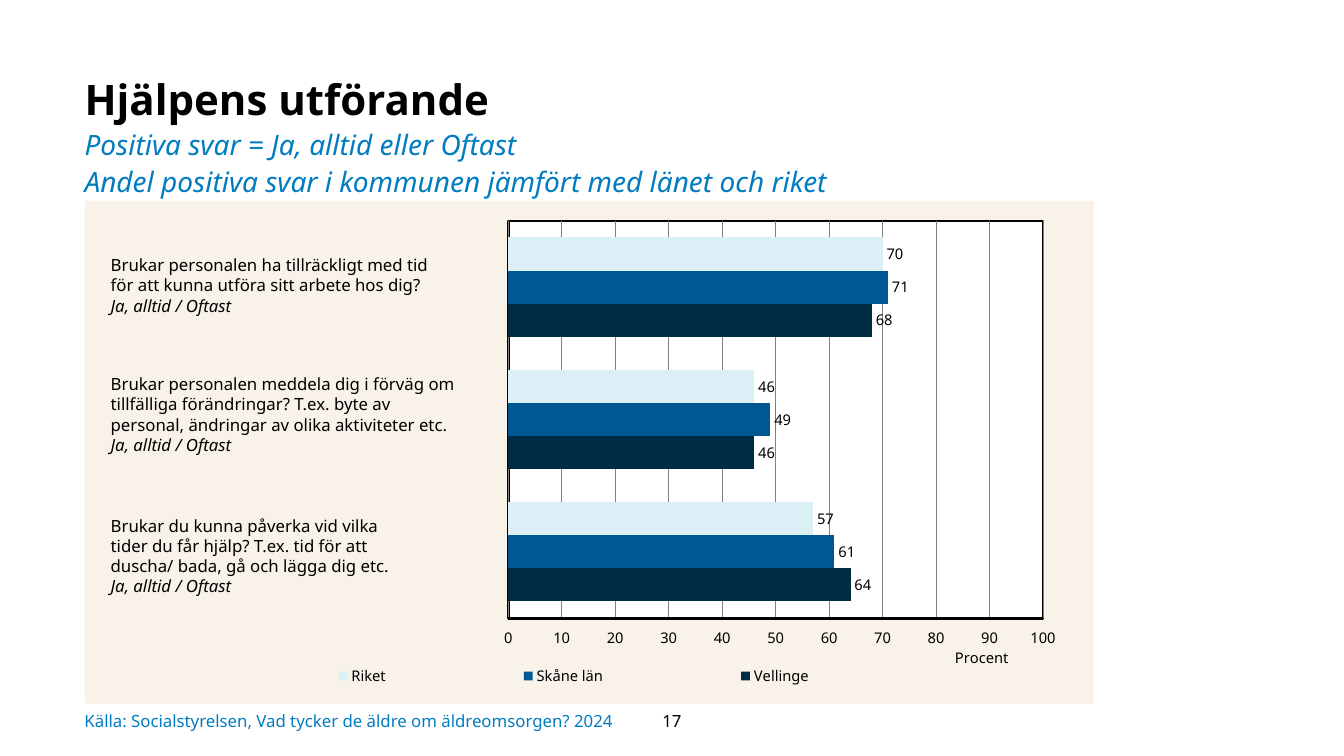
from dataclasses import dataclass

from lxml.etree import SubElement
from pptx import Presentation
from pptx.chart.data import CategoryChartData
from pptx.dml.color import RGBColor
from pptx.enum.chart import XL_CHART_TYPE as ChartType
from pptx.enum.chart import XL_LABEL_POSITION as LabelPosition
from pptx.enum.chart import XL_LEGEND_POSITION as LegendPosition
from pptx.enum.chart import XL_TICK_LABEL_POSITION as TickLabels
from pptx.enum.chart import XL_TICK_MARK as TickMark
from pptx.enum.text import MSO_ANCHOR as Anchor
from pptx.enum.text import MSO_AUTO_SIZE as AutoSize
from pptx.enum.text import PP_ALIGN as Align
from pptx.oxml import parse_xml
from pptx.oxml.ns import nsdecls, qn
from pptx.util import Cm, Pt


@dataclass(frozen=True)
class Theme:
    font: str = "Noto Sans"
    black: str = "000000"
    white: str = "FFFFFF"
    accent: str = "017CC1"
    panel: str = "F8F2E8"
    grid: str = "808080"
    series: tuple = ("002B45", "005892", "DBF0F6")
    heading: float = 30
    subheading: float = 20
    body: float = 12
    chart: float = 10.5


@dataclass(frozen=True)
class Box:
    left: float
    top: float
    width: float
    height: float

    def lengths(self):
        return Cm(self.left), Cm(self.top), Cm(self.width), Cm(self.height)

    def inside(self, left, top, width, height):
        return Box(self.left + left, self.top + top, width, height)


THEME = Theme()
HEADING = "Hjälpens utförande"
SUBHEADINGS = (
    "Positiva svar = Ja, alltid eller Oftast",
    "Andel positiva svar i kommunen jämfört med länet och riket",
)
ANSWER = "Ja, alltid / Oftast"
QUESTIONS = (
    (1.24, 11.99, "Brukar personalen ha tillräckligt med tid\nför att kunna utföra sitt arbete hos dig?"),
    (4.24, 9.45, "Brukar personalen meddela dig i förväg om tillfälliga förändringar? "
                 "T.ex. byte av personal, ändringar av olika aktiviteter etc."),
    (7.8, 7.54, "Brukar du kunna påverka vid vilka tider du får hjälp? "
                "T.ex. tid för att duscha/ bada, gå och lägga dig etc."),
)
RESULTS = {"Vellinge": (64, 46, 68), "Skåne län": (61, 49, 71), "Riket": (57, 46, 70)}
SOURCE = "Källa: Socialstyrelsen, Vad tycker de äldre om äldreomsorgen? 2024"


def rgb(color):
    return RGBColor.from_string(color)


def style(font, size, color=THEME.black, bold=False, italic=False):
    font.name = THEME.font
    font.size = Pt(size)
    font.color.rgb = rgb(color)
    font.bold = bold
    font.italic = italic


def draw_line(line, color, width):
    line.color.rgb = rgb(color)
    line.width = Pt(width)


def set_margins(frame, left, top, right, bottom):
    frame.margin_left, frame.margin_top = Cm(left), Cm(top)
    frame.margin_right, frame.margin_bottom = Cm(right), Cm(bottom)


def add_text(page, box, text):
    frame = page.shapes.add_textbox(*box.lengths()).text_frame
    frame.word_wrap = True
    frame.text = text
    for para in frame.paragraphs:
        for span in para.runs:
            style(span.font, THEME.body)
    return frame


def add_heading(page, box):
    title = page.shapes.title
    title.left, title.top, title.width, title.height = box.lengths()
    frame = title.text_frame
    frame.auto_size = AutoSize.NONE
    frame.word_wrap = True
    frame.vertical_anchor = Anchor.TOP
    set_margins(frame, 0, 0, 0.25, 0.13)
    frame.text = "\n".join((HEADING, *SUBHEADINGS))
    for index, para in enumerate(frame.paragraphs):
        para.alignment = Align.LEFT
        para.line_spacing = 1.1
        para.space_before = Pt(0)
        font = para.runs[0].font
        if index == 0:
            style(font, THEME.heading, bold=True)
        else:
            style(font, THEME.subheading, THEME.accent, italic=True)


def set_fill(parent, color, border="<a:noFill/>"):
    properties = parse_xml(
        f'<c:spPr {nsdecls("c", "a")}><a:solidFill><a:srgbClr val="{color}"/></a:solidFill>'
        f'<a:ln w="{Pt(2)}">{border}</a:ln></c:spPr>'
    )
    following = parent.find(qn("c:txPr"))
    if following is None:
        parent.append(properties)
    else:
        following.addprevious(properties)


def set_layout(parent, before, **values):
    for old in parent.findall(qn("c:layout")):
        parent.remove(old)
    layout = parse_xml(f'<c:layout {nsdecls("c")}><c:manualLayout/></c:layout>')
    for name, value in values.items():
        SubElement(layout[0], qn(f"c:{name}")).set("val", str(value))
    parent.find(qn(before)).addprevious(layout)


def add_results(page, box):
    data = CategoryChartData()
    data.categories = ["1", "2", "3"]
    for name, values in RESULTS.items():
        data.add_series(name, values)
    chart = page.shapes.add_chart(ChartType.BAR_CLUSTERED, *box.lengths(), data).chart
    chart.has_title = False
    style(chart.font, THEME.chart)
    set_fill(chart.element, THEME.panel)

    plot = chart.plots[0]
    plot.gap_width = 100
    plot.overlap = 0
    plot.vary_by_categories = False
    for series, color in zip(plot.series, THEME.series):
        series.format.fill.solid()
        series.format.fill.fore_color.rgb = rgb(color)
        labels = series.data_labels
        labels.show_value = True
        labels.position = LabelPosition.OUTSIDE_END
        style(labels.font, THEME.chart)

    chart.category_axis.visible = False
    axis = chart.value_axis
    axis.minimum_scale, axis.maximum_scale, axis.major_unit = 0, 100, 10
    axis.major_tick_mark = axis.minor_tick_mark = TickMark.NONE
    axis.tick_label_position = TickLabels.LOW
    style(axis.tick_labels.font, THEME.chart)
    draw_line(axis.format.line, THEME.black, 2)
    draw_line(axis.major_gridlines.format.line, THEME.grid, 0.75)
    caption = axis.axis_title
    caption.text_frame.text = "Procent"
    style(caption.text_frame.paragraphs[0].runs[0].font, THEME.chart)
    set_layout(caption._element, "c:overlay", xMode="edge", yMode="edge", x=0.86, y=0.88)

    chart.has_legend = True
    legend = chart.legend
    legend.position = LegendPosition.BOTTOM
    legend.include_in_layout = False
    style(legend.font, THEME.chart)
    set_layout(legend._element, "c:overlay", xMode="edge", yMode="edge", x=0.12, y=0.92, w=0.73, h=0.05)

    area = chart.element.find(f".//{qn('c:plotArea')}")
    border = f'<a:solidFill><a:srgbClr val="{THEME.black}"/></a:solidFill>'
    set_fill(area, THEME.white, border)
    set_layout(area, "c:barChart", layoutTarget="inner", xMode="edge", yMode="edge",
               x=0.42, y=0.04, w=0.53, h=0.79)


def add_questions(page, box):
    for top, width, question in QUESTIONS:
        frame = add_text(page, box.inside(0.41, top, width, 2.3), f"{question}\n{ANSWER}")
        frame.paragraphs[-1].runs[0].font.italic = True


def add_footer(page, box):
    source = add_text(page, box, SOURCE)
    set_margins(source, 0, 0, 0, 0)
    source.paragraphs[0].runs[0].font.color.rgb = rgb(THEME.accent)
    number = add_text(page, box.inside(13.51, 0, 2.59, box.height), "17")
    number.paragraphs[0].alignment = Align.CENTER
    for frame in (source, number):
        frame.vertical_anchor = Anchor.MIDDLE


def main():
    deck = Presentation()
    deck.slide_width, deck.slide_height = Cm(33.87), Cm(19.05)
    page = deck.slides.add_slide(deck.slide_layouts[5])
    panel = Box(2.13, 5.06, 25.43, 12.67)
    add_heading(page, Box(2.13, 1.73, 19.79, 3.07))
    add_results(page, panel)
    add_questions(page, panel)
    add_footer(page, Box(2.13, 17.65, 22.94, 1.02))
    deck.save("out.pptx")


if __name__ == "__main__":
    main()
